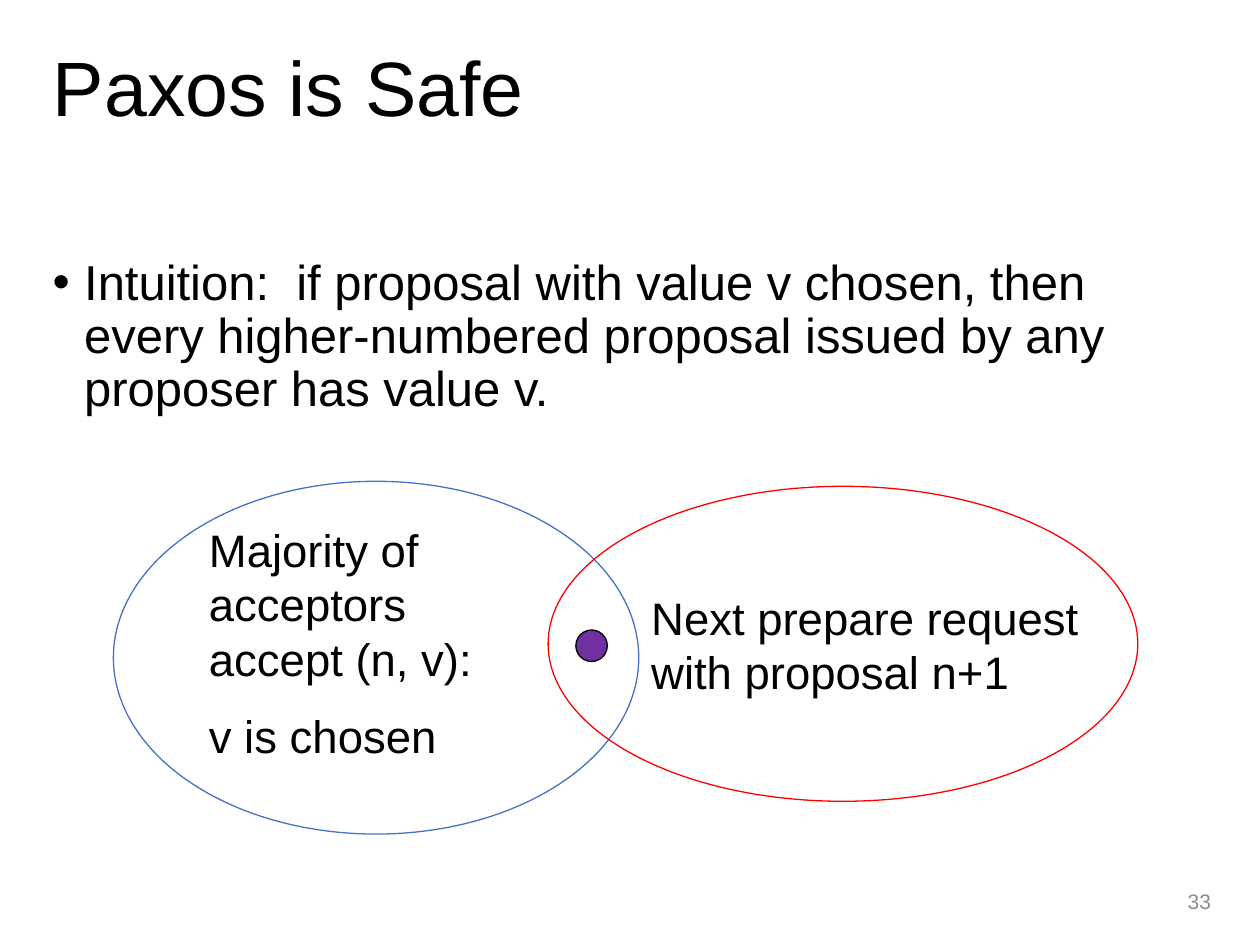
import pptx
import pptx.dml.color
import pptx.enum.shapes
import pptx.enum.text
import pptx.oxml.ns
import pptx.util
from lxml import etree

WIDTH, HEIGHT = 10, 7.5
MARGIN, CONTENT_WIDTH = 0.32, 9.4
FONT = "Arial"
COLORS = {
    "text": "000000",
    "number": "8C8C8C",
    "white": "FFFFFF",
    "accepted": "4472C4",
    "prepared": "FF0000",
    "shared": "7030A0",
}
ALIGN = pptx.enum.text.PP_ALIGN
ANCHOR = pptx.enum.text.MSO_ANCHOR


def color(name):
    return pptx.dml.color.RGBColor.from_string(COLORS[name])


def inches(*lengths):
    return [pptx.util.Inches(length) for length in lengths]


def write(frame, *texts, size, ink="text", align=ALIGN.LEFT, anchor=ANCHOR.TOP,
          line_spacing=1.0, before=0):
    """Fill a text frame with one paragraph for each text."""
    frame.word_wrap = True
    frame.auto_size = pptx.enum.text.MSO_AUTO_SIZE.NONE
    frame.vertical_anchor = anchor
    for index, text in enumerate(texts):
        para = frame.add_paragraph() if index else frame.paragraphs[0]
        para.alignment = align
        para.line_spacing = line_spacing
        para.space_before = pptx.util.Pt(before)
        span = para.add_run()
        span.text = text
        span.font.name = FONT
        span.font.size = pptx.util.Pt(size)
        span.font.color.rgb = color(ink)


def add_text(page, bounds, *texts, **style):
    box = page.shapes.add_textbox(*inches(*bounds))
    write(box.text_frame, *texts, **style)
    return box


def add_bullet(para, indent):
    """Give a paragraph a bullet with a hanging indent in inches."""
    properties = para._p.get_or_add_pPr()
    properties.set("marL", str(pptx.util.Inches(indent)))
    properties.set("indent", str(-pptx.util.Inches(indent)))
    for tag, key, value in (("a:buFont", "typeface", FONT), ("a:buChar", "char", "•")):
        etree.SubElement(properties, pptx.oxml.ns.qn(tag)).set(key, value)


def add_ellipse(page, bounds, line, fill=None):
    oval = page.shapes.add_shape(pptx.enum.shapes.MSO_SHAPE.OVAL, *inches(*bounds))
    oval.shadow.inherit = False
    if fill:
        oval.fill.solid()
        oval.fill.fore_color.rgb = color(fill)
    else:
        oval.fill.background()
    oval.line.color.rgb = color(line)
    oval.line.width = pptx.util.Pt(0.75)


def set_title(page, text):
    title = page.shapes.title
    title.left, title.top, title.width, title.height = inches(
        MARGIN, 0, CONTENT_WIDTH, 1.45)
    write(title.text_frame, text, size=44, anchor=ANCHOR.MIDDLE, line_spacing=0.9)


def add_quorums(page):
    """Draw the two overlapping majorities and the acceptor they share."""
    add_ellipse(page, (0.9, 3.82, 4.17, 2.8), "accepted", fill="white")
    add_text(page, (1.56, 4.09, 2.83, 2.07),
             "Majority of acceptors accept (n, v):", "v is chosen", size=26, before=13)
    add_ellipse(page, (4.35, 3.86, 4.68, 2.5), "prepared")
    add_text(page, (5.07, 4.63, 3.83, 0.98),
             "Next prepare request with proposal n+1", size=26, before=13)
    add_ellipse(page, (4.57, 5, 0.25, 0.25), "text", fill="shared")


def main():
    deck = pptx.Presentation()
    deck.slide_width, deck.slide_height = inches(WIDTH, HEIGHT)
    page = deck.slides.add_slide(deck.slide_layouts.get_by_name("Title Only"))
    set_title(page, "Paxos is Safe")
    intuition = add_text(
        page, (MARGIN, 2, CONTENT_WIDTH, 4.76),
        "Intuition:  if proposal with value v chosen, then every higher-numbered "
        "proposal issued by any proposer has value v.",
        size=28, line_spacing=0.9, before=10)
    add_bullet(intuition.text_frame.paragraphs[0], 0.25)
    add_text(page, (7.46, 6.95, 2.25, 0.4), "33", size=12, ink="number",
             align=ALIGN.RIGHT, anchor=ANCHOR.MIDDLE)
    add_quorums(page)
    deck.save("out.pptx")


if __name__ == "__main__":
    main()
